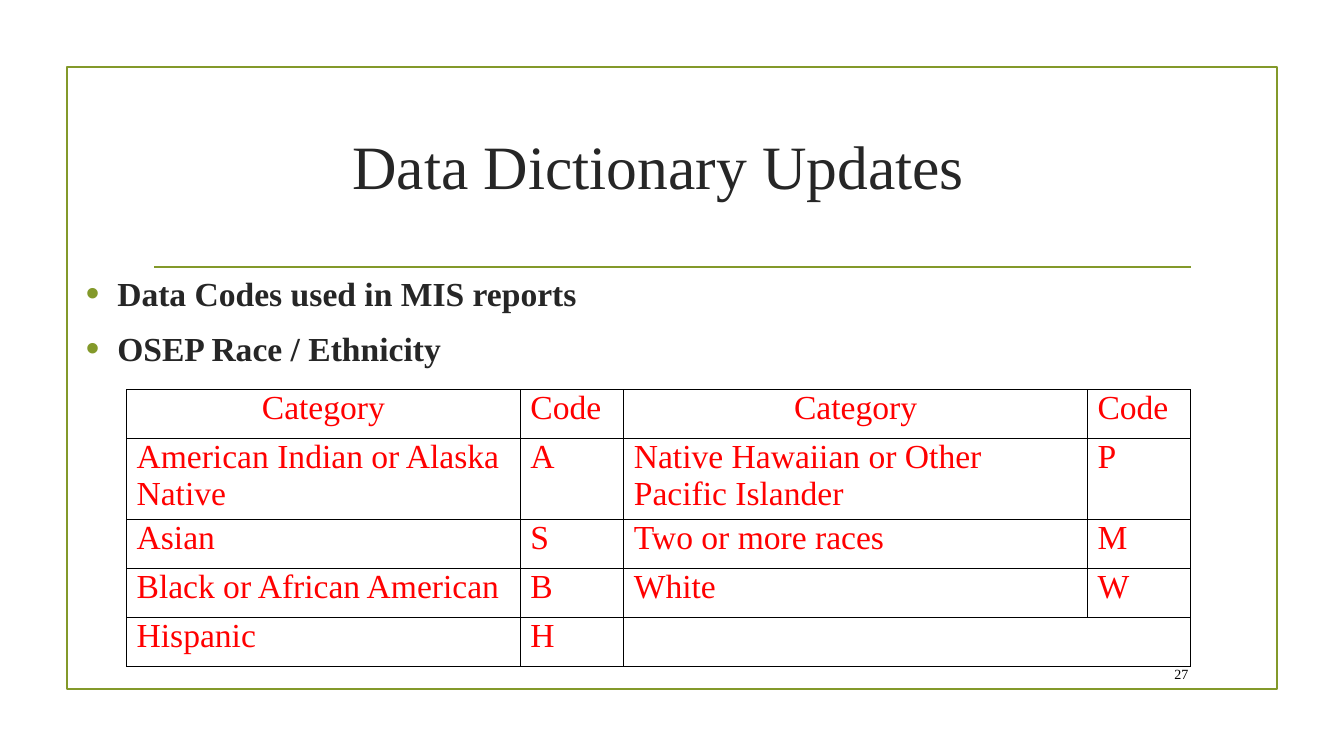
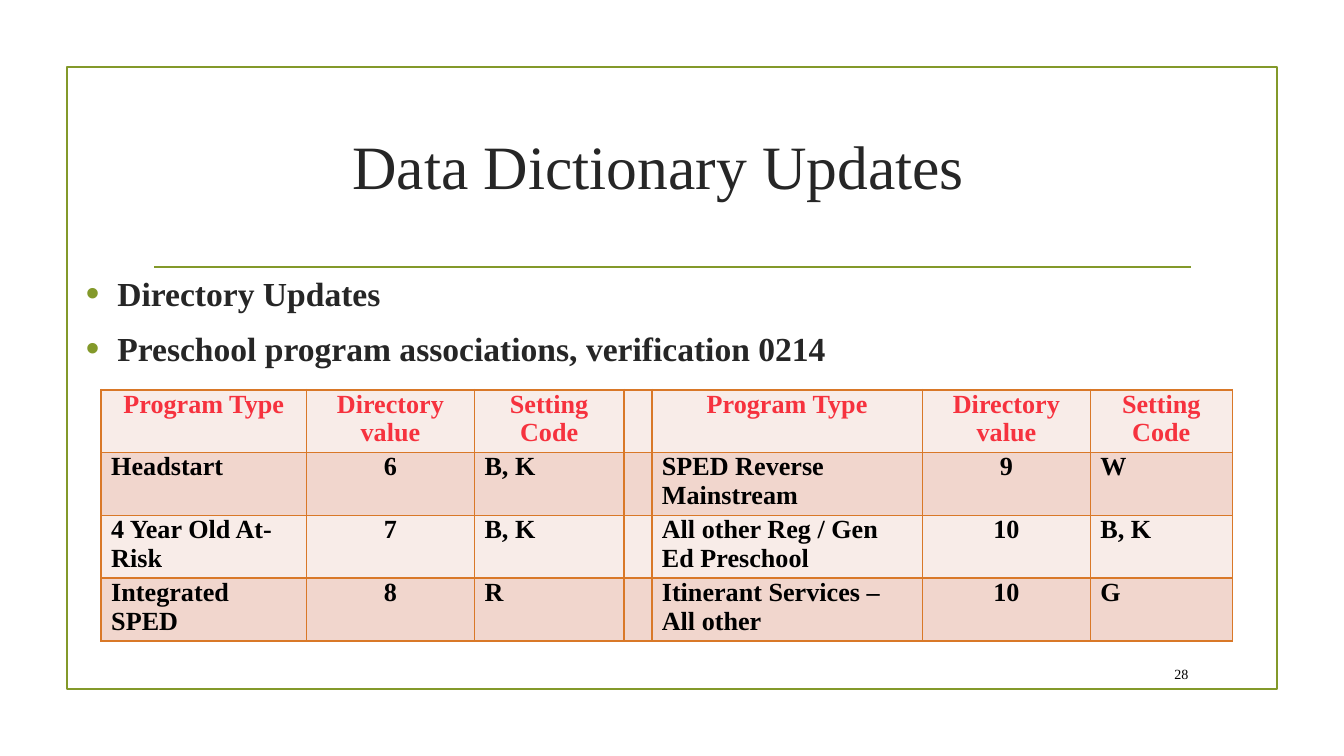
"""Build two slides of data dictionary updates, each with bullets and a code table."""
from lxml.etree import SubElement
from pptx import Presentation
from pptx.dml.color import RGBColor
from pptx.enum.shapes import MSO_CONNECTOR, MSO_SHAPE
from pptx.enum.text import MSO_ANCHOR, PP_ALIGN
from pptx.oxml.ns import qn
from pptx.util import Pt

FONT = "Times New Roman"
OLIVE, INK, BLACK, RED = "83992A", "262626", "000000", "FF0000"
CORAL, ORANGE = "F6323E", "D97828"
BAND_FILLS = ["F8ECE8", "F1D6CD"]


def color(value):
    return RGBColor.from_string(value)


def add_run(paragraph, text, size, ink, bold=False, align=PP_ALIGN.LEFT):
    paragraph.alignment = align
    run = paragraph.add_run()
    run.text = text
    run.font.name = FONT
    run.font.size = Pt(size)
    run.font.bold = bold
    run.font.color.rgb = color(ink)


updates = [
    {
        "number": "27",
        "topics": ["Data Codes used in MIS reports", "OSEP Race / Ethnicity"],
        "left": 67.8, "widths": [211, 55.4, 248.4, 55.4], "row_height": 26.2,
        "size": 18, "bold": False, "header_ink": RED, "body_ink": RED,
        "border": BLACK, "border_width": 0.5, "fills": None,
        "centered_headers": [0, 2], "centered_columns": [],
        "rows": [
            ["Category", "Code", "Category", "Code"],
            ["American Indian or Alaska Native", "A",
             "Native Hawaiian or Other Pacific Islander", "P"],
            ["Asian", "S", "Two or more races", "M"],
            ["Black or African American", "B", "White", "W"],
            ["Hispanic", "H", "", ""],
        ],
        "merge": [(4, 2), (4, 3)],
    },
    {
        "number": "28",
        "topics": ["Directory Updates", "Preschool program associations, verification 0214"],
        "left": 54.2, "widths": [110, 90, 80, 15, 145, 90, 76], "row_height": 30.9,
        "size": 14, "bold": True, "header_ink": CORAL, "body_ink": BLACK,
        "border": ORANGE, "border_width": 1, "fills": BAND_FILLS,
        "centered_headers": range(7), "centered_columns": [1, 5],
        "rows": [
            ["Program Type", "Directory value", "Setting Code", "",
             "Program Type", "Directory value", "Setting Code"],
            ["Headstart", "6", "B, K", "", "SPED Reverse Mainstream", "9", "W"],
            ["4 Year Old At-Risk", "7", "B, K", "", "All other Reg / Gen Ed Preschool", "10", "B, K"],
            ["Integrated SPED", "8", "R", "", "Itinerant Services – All other", "10", "G"],
        ],
        "merge": None,
    },
]

prs = Presentation()
prs.slide_width, prs.slide_height = Pt(720), Pt(405)

for update in updates:
    slide = prs.slides.add_slide(prs.slide_layouts[6])

    border = slide.shapes.add_shape(MSO_SHAPE.RECTANGLE, Pt(36), Pt(36), Pt(648), Pt(333))
    border.shadow.inherit = False
    border.fill.background()
    border.line.color.rgb = color(OLIVE)
    border.line.width = Pt(1.25)

    rule = slide.shapes.add_connector(MSO_CONNECTOR.STRAIGHT, Pt(82.6), Pt(143.2), Pt(638), Pt(143.2))
    rule.line.color.rgb = color(OLIVE)
    rule.line.width = Pt(1.25)
    SubElement(rule.element.spPr, qn("a:effectLst"))

    title = slide.shapes.add_textbox(Pt(54), Pt(52.6), Pt(597.6), Pt(71.3)).text_frame
    title.word_wrap = True
    title.vertical_anchor = MSO_ANCHOR.MIDDLE
    add_run(title.paragraphs[0], "Data Dictionary Updates", 33, INK, align=PP_ALIGN.CENTER)

    body = slide.shapes.add_textbox(Pt(38.9), Pt(142.6), Pt(645), Pt(228.2)).text_frame
    body.word_wrap = True
    for index, topic in enumerate(update["topics"]):
        paragraph = body.add_paragraph() if index else body.paragraphs[0]
        properties = paragraph._p.get_or_add_pPr()
        properties.set("marL", str(Pt(16.9)))
        properties.set("indent", str(-Pt(16.9)))
        bullet_color = SubElement(properties, qn("a:buClr"))
        SubElement(bullet_color, qn("a:srgbClr"), val=OLIVE)
        SubElement(properties, qn("a:buSzPct"), val="115000")
        SubElement(properties, qn("a:buFont"), typeface="Arial")
        SubElement(properties, qn("a:buChar"), char="•")
        if index:
            paragraph.space_before = Pt(3.6)
        paragraph.space_after = Pt(4.5)
        add_run(paragraph, topic, 18, INK, bold=True)

    rows, widths = update["rows"], update["widths"]
    codes = slide.shapes.add_table(
        len(rows), len(widths), Pt(update["left"]), Pt(208.8),
        Pt(sum(widths)), Pt(update["row_height"] * len(rows))).table
    codes.first_row = False
    codes.horz_banding = False
    for column, width in zip(codes.columns, widths):
        column.width = Pt(width)
    for r, row in enumerate(rows):
        codes.rows[r].height = Pt(update["row_height"])
        centered = update["centered_columns"] if r else update["centered_headers"]
        ink = update["body_ink"] if r else update["header_ink"]
        for c, text in enumerate(row):
            cell = codes.cell(r, c)
            cell.margin_left = cell.margin_right = Pt(5.4)
            cell.margin_top = cell.margin_bottom = 0
            for edge in ("a:lnL", "a:lnR", "a:lnT", "a:lnB"):
                line = SubElement(cell._tc.get_or_add_tcPr(), qn(edge), w=str(Pt(update["border_width"])))
                SubElement(SubElement(line, qn("a:solidFill")), qn("a:srgbClr"), val=update["border"])
            if update["fills"]:
                cell.fill.solid()
                cell.fill.fore_color.rgb = color(update["fills"][r % 2])
            else:
                cell.fill.background()
            if text:
                align = PP_ALIGN.CENTER if c in centered else PP_ALIGN.LEFT
                add_run(cell.text_frame.paragraphs[0], text, update["size"], ink, update["bold"], align)
    if update["merge"]:
        first, last = update["merge"]
        codes.cell(*first).merge(codes.cell(*last))

    page = slide.shapes.add_textbox(Pt(611.3), Pt(352.8), Pt(32.4), Pt(16.6)).text_frame
    page.word_wrap = True
    page.vertical_anchor = MSO_ANCHOR.MIDDLE
    add_run(page.paragraphs[0], update["number"], 7.5, BLACK, align=PP_ALIGN.RIGHT)

prs.save("out.pptx")
